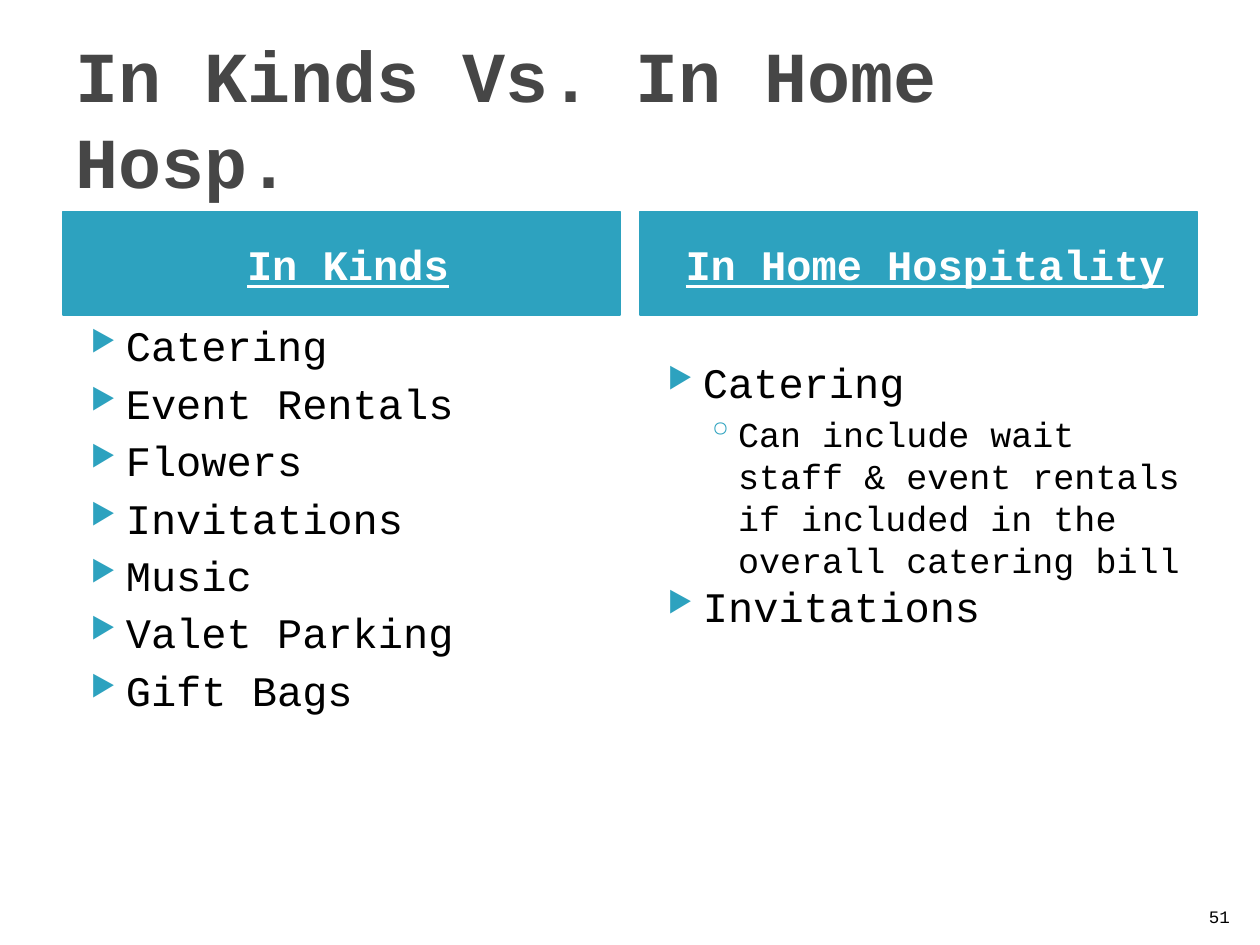
from lxml import etree
from pptx import Presentation
from pptx.dml.color import RGBColor
from pptx.enum.shapes import MSO_SHAPE
from pptx.enum.text import MSO_ANCHOR, MSO_AUTO_SIZE, PP_ALIGN
from pptx.oxml.ns import qn
from pptx.util import Inches, Pt

TEAL = RGBColor(0x2D, 0xA2, 0xBF)
GRAY = RGBColor(0x46, 0x46, 0x46)
WHITE = RGBColor(0xFF, 0xFF, 0xFF)
BLACK = RGBColor(0, 0, 0)
FONT = "Courier New"
LEFT, CENTER, RIGHT = PP_ALIGN.LEFT, PP_ALIGN.CENTER, PP_ALIGN.RIGHT
TOP, MIDDLE, BOTTOM = MSO_ANCHOR.TOP, MSO_ANCHOR.MIDDLE, MSO_ANCHOR.BOTTOM
RECTANGLE = MSO_SHAPE.RECTANGLE
NO_FIT = MSO_AUTO_SIZE.NONE

# For each level: bullet, its size in percent, text size, margin, indent
LEVELS = [("▶", 68, 24, 0.4, -0.28), ("◦", 100, 20, 0.68, -0.25)]

MARGIN = 0.5
COLUMN_WIDTH = 4.42
COLUMN_STEP = 4.58

# For each column: heading, list top, list height, space before, (level, text)
COLUMNS = [
    ("In Kinds", 2.49, 4.26, 4, [
        (0, "Catering"), (0, "Event Rentals"), (0, "Flowers"),
        (0, "Invitations"), (0, "Music"), (0, "Valet Parking"),
        (0, "Gift Bags")]),
    ("In Home Hospitality", 2.78, 3.11, 0, [
        (0, "Catering"),
        (1, "Can include wait staff & event rentals if included in the "
            "overall catering bill"),
        (0, "Invitations")]),
]


def write(para, text, size, color=BLACK, bold=False, underline=False,
          align=LEFT, before=0):
    para.alignment = align
    para.space_before = Pt(before)
    span = para.add_run()
    span.text = text
    font = span.font
    font.name, font.size, font.bold = FONT, Pt(size), bold
    font.underline = underline
    font.color.rgb = color


def prepare(frame, anchor=TOP):
    frame.word_wrap = True
    frame.auto_size = NO_FIT
    frame.vertical_anchor = anchor
    return frame


def place(shape, box):
    shape.left, shape.top, shape.width, shape.height = map(Inches, box)


def add_bullet(para, char, percent, margin, indent):
    properties = para._p.get_or_add_pPr()
    properties.set("marL", str(Inches(margin)))
    properties.set("indent", str(Inches(indent)))
    color = etree.SubElement(properties, qn("a:buClr"))
    etree.SubElement(color, qn("a:srgbClr"), val=str(TEAL))
    etree.SubElement(properties, qn("a:buSzPct"), val=str(percent * 1000))
    etree.SubElement(properties, qn("a:buChar"), char=char)


def add_title(page, box):
    title = page.shapes.title
    place(title, box)
    frame = prepare(title.text_frame, MIDDLE)
    write(frame.paragraphs[0], "In Kinds Vs. In Home Hosp.", 41, color=GRAY,
          bold=True)


def add_heading(page, box, text):
    bar = page.shapes.add_shape(RECTANGLE, *map(Inches, box))
    bar.shadow.inherit = False
    bar.fill.solid()
    bar.fill.fore_color.rgb = TEAL
    bar.line.color.rgb = TEAL
    bar.line.width = Pt(0.75)
    frame = prepare(bar.text_frame, MIDDLE)
    frame.margin_left = Inches(0.2)
    write(frame.paragraphs[0], text, 24, color=WHITE, bold=True,
          underline=True, align=CENTER)


def add_list(page, box, items, before):
    frame = prepare(page.shapes.add_textbox(*map(Inches, box)).text_frame)
    for index, (level, text) in enumerate(items):
        para = frame.add_paragraph() if index else frame.paragraphs[0]
        char, percent, size, margin, indent = LEVELS[level]
        para.level = level
        add_bullet(para, char, percent, margin, indent)
        gap = 3.2 if level else before
        write(para, text, size, before=gap if index else 0)


def add_page_number(page, box):
    number = page.shapes.add_textbox(*map(Inches, box))
    frame = prepare(number.text_frame, BOTTOM)
    write(frame.paragraphs[0], "51", 10, align=RIGHT)


def main():
    deck = Presentation()
    deck.slide_width, deck.slide_height = Inches(10), Inches(7.5)
    page = deck.slides.add_slide(deck.slide_layouts[5])
    add_title(page, (MARGIN, 0.3, 9, 1.25))
    for index, (heading, top, height, before, items) in enumerate(COLUMNS):
        left = MARGIN + index * COLUMN_STEP
        add_heading(page, (left, 1.68, COLUMN_WIDTH, 0.82), heading)
        add_list(page, (left, top, COLUMN_WIDTH, height), items, before)
    add_page_number(page, (9.46, 7.01, 0.4, 0.4))
    deck.save("out.pptx")


if __name__ == "__main__":
    main()
